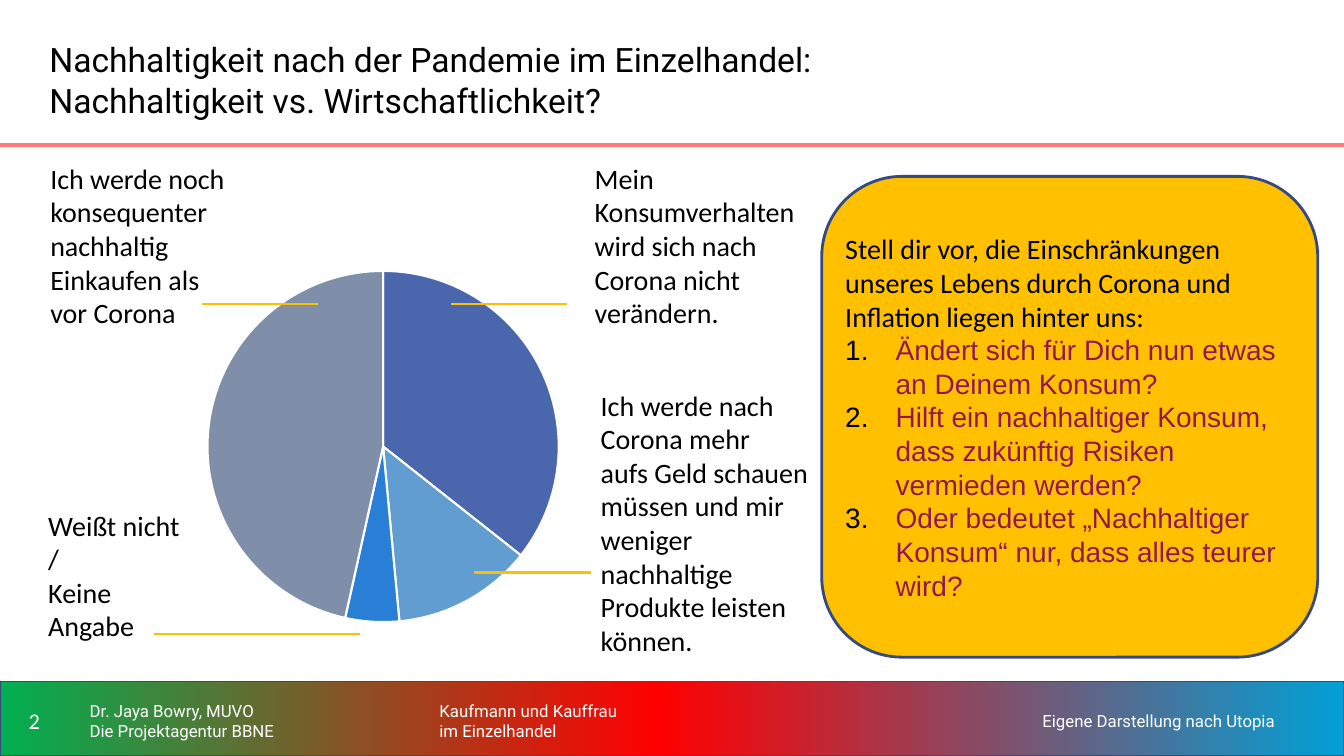
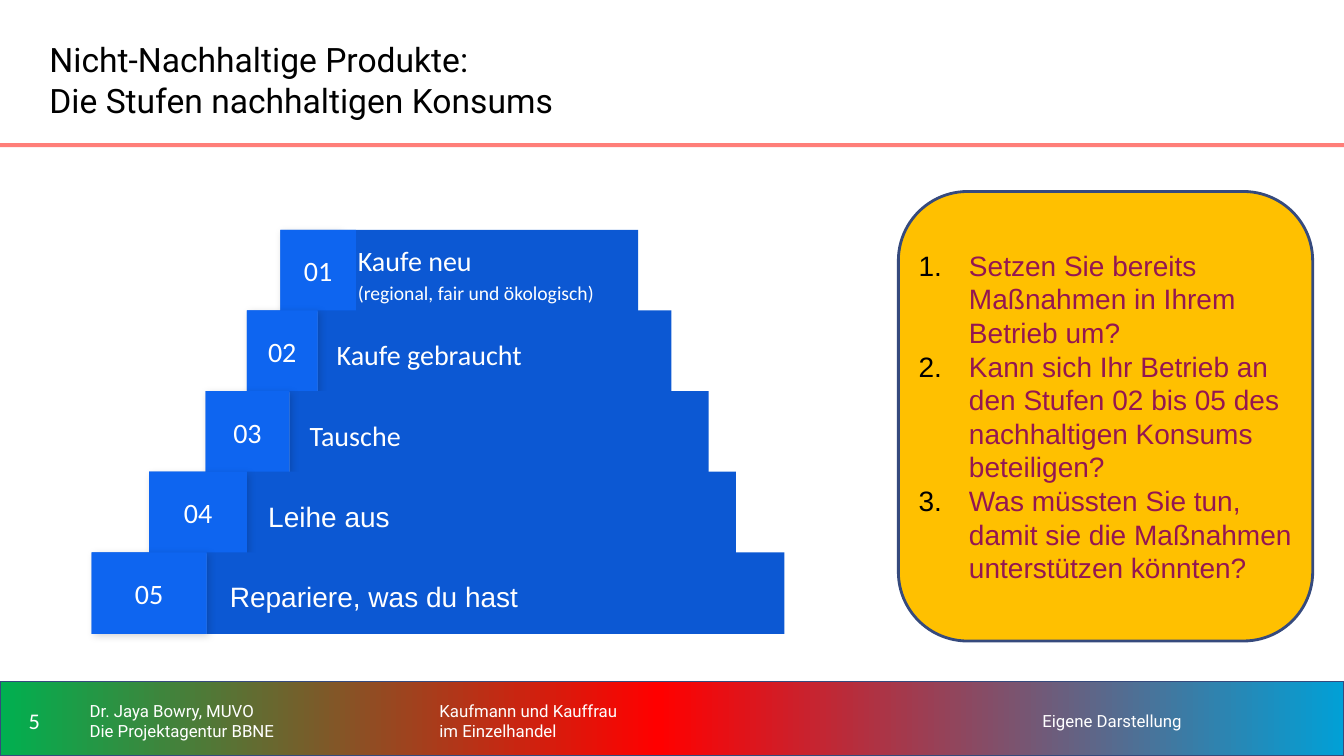
from copy import deepcopy

from lxml import etree
from pptx import Presentation
from pptx.chart.data import CategoryChartData
from pptx.dml.color import RGBColor
from pptx.enum.chart import XL_CHART_TYPE as ChartType
from pptx.enum.shapes import MSO_CONNECTOR as Connector, MSO_SHAPE as Preset
from pptx.enum.text import MSO_ANCHOR as Anchor, MSO_AUTO_SIZE as AutoSize, PP_ALIGN as Align
from pptx.oxml.ns import qn
from pptx.util import Inches, Pt

COLORS = {
    "black": "000000", "white": "FFFFFF", "rule": "FF7E79", "outline": "364A7D",
    "green": "00B050", "red": "FF0000", "cyan": "01A0D6",
    "callout": "FFC000", "question": "941651", "leader": "FBC003",
    "bar": "0C58D3", "tab_back": "0D5DDF", "tab": "0E65F0",
    "slice_1": "4A66AC", "slice_2": "629DD1", "slice_3": "297FD5", "slice_4": "7F8FA9",
}
RGB = {name: RGBColor.from_string(value) for name, value in COLORS.items()}


def add_box(shapes, preset, box, fill, outline=None, width=1):
    shape = shapes.add_shape(preset, *map(Inches, box))
    shape.shadow.inherit = False
    shape.fill.solid()
    shape.fill.fore_color.rgb = RGB[fill]
    if outline:
        shape.line.color.rgb = RGB[outline]
        shape.line.width = Pt(width)
    else:
        shape.line.fill.background()
    return shape


def write(shape, text, font="Calibri", size=20, color="black", align=Align.LEFT,
          anchor=Anchor.MIDDLE, insets=(0.1, 0.05), numbered=False, spacing=None):
    """Append one paragraph to a shape; a newline becomes a line break."""
    frame = shape.text_frame
    frame.word_wrap = True
    frame.auto_size = AutoSize.NONE
    frame.vertical_anchor = anchor
    frame.margin_left = frame.margin_right = Inches(insets[0])
    frame.margin_top = frame.margin_bottom = Inches(insets[1])
    paragraph = frame.add_paragraph() if frame.text else frame.paragraphs[0]
    paragraph.alignment = align
    if spacing:
        paragraph.line_spacing = spacing
    if numbered:
        properties = paragraph._p.get_or_add_pPr()
        properties.set("marL", str(Inches(0.5)))
        properties.set("indent", str(-Inches(0.5)))
        bullet_color = etree.SubElement(properties, qn("a:buClr"))
        etree.SubElement(bullet_color, qn("a:srgbClr"), val=COLORS["black"])
        etree.SubElement(properties, qn("a:buAutoNum"), type="arabicPeriod")
    for index, line in enumerate(text.split("\n")):
        if index:
            paragraph.add_line_break()
        run = paragraph.add_run()
        run.text = line
        run.font.name = font
        run.font.size = Pt(size)
        run.font.color.rgb = RGB[color]


presentation = Presentation()
presentation.slide_width = Inches(13.33)
presentation.slide_height = Inches(7.5)

# Shared layout: title position, footer band and title rule
layout = presentation.slide_layouts[5]
for placeholder in list(layout.placeholders)[1:]:
    placeholder.element.getparent().remove(placeholder.element)
layout_title = layout.placeholders[0]
layout_title.left, layout_title.top = Inches(0.39), Inches(0.2)
layout_title.width, layout_title.height = Inches(9.84), Inches(1.18)

pie_slide = presentation.slides.add_slide(layout)
steps_slide = presentation.slides.add_slide(layout)

band = add_box(pie_slide.shapes, Preset.RECTANGLE, (0, 6.76, 13.33, 0.74), "red", "outline")
band.fill.gradient()
stop_list = band.element.find(".//" + qn("a:gsLst"))
stop_list.insert(1, deepcopy(stop_list[0]))
band.element.find(".//" + qn("a:lin")).set("ang", "0")
for stop, position, color in zip(band.fill.gradient_stops, (0, 0.49, 1), ("green", "red", "cyan")):
    stop.position = position
    stop.color.rgb = RGB[color]
rule = add_box(pie_slide.shapes, Preset.RECTANGLE, (0, 1.42, 13.33, 0.04), "rule")
for index, shape in enumerate((band, rule)):
    layout.shapes.element.insert(2 + index, shape.element)

# Titles, footers and question boxes
pages = [
    (pie_slide, "2",
     "Nachhaltigkeit nach der Pandemie im Einzelhandel:\nNachhaltigkeit vs. Wirtschaftlichkeit?",
     "Eigene Darstellung nach Utopia", (8.15, 1.75, 4.92, 4.77),
     "Stell dir vor, die Einschränkungen unseres Lebens durch Corona und Inflation "
     "liegen hinter uns:",
     ["Ändert sich für Dich nun etwas an Deinem Konsum?",
      "Hilft ein nachhaltiger Konsum, dass zukünftig Risiken vermieden werden?",
      "Oder bedeutet „Nachhaltiger Konsum“ nur, dass alles teurer wird?"]),
    (steps_slide, "5",
     "Nicht-Nachhaltige Produkte:\nDie Stufen nachhaltigen Konsums",
     "Eigene Darstellung", (8.91, 1.9, 4.11, 4.46), None,
     ["Setzen Sie bereits Maßnahmen in Ihrem Betrieb um?",
      "Kann sich Ihr Betrieb an den Stufen 02 bis 05 des nachhaltigen Konsums beteiligen?",
      "Was müssten Sie tun, damit sie die Maßnahmen unterstützen könnten?"]),
]
for slide, number, title, credit, callout_box, intro, questions in pages:
    write(slide.shapes.title, title, "Roboto", 24)
    number_box = slide.shapes.add_textbox(Inches(0), Inches(6.84), Inches(0.68), Inches(0.61))
    write(number_box, number, size=16, color="white", align=Align.CENTER)
    footers = [
        (0.79, 2.78, ["Dr. Jaya Bowry, MUVO", "Die Projektagentur BBNE"]),
        (4.26, 3.1, ["Kaufmann und Kauffrau \nim Einzelhandel"]),
        (10.24, 2.78, [credit]),
    ]
    for left, width, lines in footers:
        footer = slide.shapes.add_textbox(Inches(left), Inches(6.84), Inches(width), Inches(0.62))
        for line in lines:
            write(footer, line, "Roboto", 12, "white")

    callout = add_box(slide.shapes, Preset.ROUNDED_RECTANGLE, callout_box, "callout", "outline", 2)
    callout.adjustments[0] = 0.167
    if intro:
        write(callout, intro, insets=(0, 0))
    for question in questions:
        write(callout, question, "Arial", color="question", insets=(0, 0), numbered=True)

# Pie chart
chart_data = CategoryChartData()
chart_data.categories = ["1", "2", "3", "4"]
chart_data.add_series("Series 1", (36, 13, 5, 47))
chart = pie_slide.shapes.add_chart(
    ChartType.PIE, Inches(1.53), Inches(2.55), Inches(4.54), Inches(3.76), chart_data).chart
chart.has_legend = False
chart.has_title = False
chart.font.name = "Arial"
chart.font.size = Pt(10)
chart.font.color.rgb = RGB["black"]
plot = chart.plots[0]
plot.vary_by_categories = True
for index in range(4):
    point_format = plot.series[0].points[index].format
    point_format.fill.solid()
    point_format.fill.fore_color.rgb = RGB[f"slice_{index + 1}"]
    point_format.line.color.rgb = RGB["white"]
    point_format.line.width = Pt(1.5)

# Answers beside the pie
answers = [
    ((5.8, 1.5, 2.24, 1.88), "Mein Konsumverhalten wird sich nach Corona nicht verändern."),
    ((0.4, 1.5, 1.95, 1.88), "Ich werde noch konsequenter nachhaltig Einkaufen als vor Corona"),
    ((5.86, 3.75, 2.4, 2.89), "Ich werde nach Corona mehr \naufs Geld schauen müssen und mir "
                              "weniger nachhaltige Produkte leisten können."),
    ((0.38, 4.94, 1.5, 1.55), "Weißt nicht / \nKeine Angabe"),
]
for box, answer in answers:
    answer_box = pie_slide.shapes.add_textbox(*map(Inches, box))
    write(answer_box, answer, anchor=Anchor.TOP, insets=(0.1, 0.1))

# Leader lines: start, end, height
for start, end, top in [(4.47, 5.62, 3.02), (4.7, 5.86, 5.68), (1.53, 3.57, 6.29), (2, 3.15, 3.02)]:
    leader = pie_slide.shapes.add_connector(
        Connector.STRAIGHT, Inches(start), Inches(top), Inches(end), Inches(top))
    leader.line.color.rgb = RGB["leader"]
    leader.line.width = Pt(1.5)
    etree.SubElement(leader.element.spPr, qn("a:effectLst"))

# Steps: tab left, back tab width, tab width, bar right, label left, label width, font, lines
STEP_TOP, STEP_PITCH, STEP_HEIGHT = 2.28, 0.8, 0.81
steps = [
    (2.78, 0.59, 0.75, 6.33, 3.42, 2.74, "Calibri",
     [("Kaufe neu", 20), ("(regional, fair und ökologisch)", 14)]),
    (2.45, 0.7, 0.7, 6.66, 3.21, 2.86, "Calibri", [("Kaufe gebraucht", 20)]),
    (2.04, 0.83, 0.83, 7.03, 2.94, 3.39, "Calibri", [("Tausche", 20)]),
    (1.48, 0.97, 0.97, 7.3, 2.53, 3.95, "Arial", [("Leihe aus", 20)]),
    (0.91, 1.14, 1.14, 7.78, 2.15, 4.66, "Arial", [("Repariere, was du hast", 20)]),
]
for index, (left, back_width, tab_width, right, label_left, label_width, font, lines) in enumerate(steps):
    top = STEP_TOP + index * STEP_PITCH
    bar_left = left + back_width
    shapes = steps_slide.shapes.add_group_shape().shapes
    add_box(shapes, Preset.RECTANGLE, (bar_left, top, right - bar_left, STEP_HEIGHT), "bar")
    label = shapes.add_textbox(
        Inches(label_left), Inches(top + 0.1), Inches(label_width), Inches(0.63))
    for line, size in lines:
        write(label, line, font, size, "white", insets=(0.13, 0.13), spacing=1.15)

    tab_back = add_box(shapes, Preset.RECTANGLE, (left, top, back_width, STEP_HEIGHT), "tab_back")
    effects = tab_back.element.spPr.find(qn("a:effectLst"))
    shadow = etree.SubElement(
        effects, qn("a:outerShdw"), blurRad=str(Pt(5.6)), dist=str(Pt(2.2)),
        dir="2700000", algn="tl", rotWithShape="0")
    shadow_color = etree.SubElement(shadow, qn("a:srgbClr"), val=COLORS["black"])
    etree.SubElement(shadow_color, qn("a:alpha"), val="17000")

    tab = add_box(shapes, Preset.RECTANGLE, (left, top, tab_width, STEP_HEIGHT), "tab")
    write(tab, f"{index + 1:02}", color="white", align=Align.CENTER, insets=(0.13, 0.13))

presentation.save("out.pptx")
